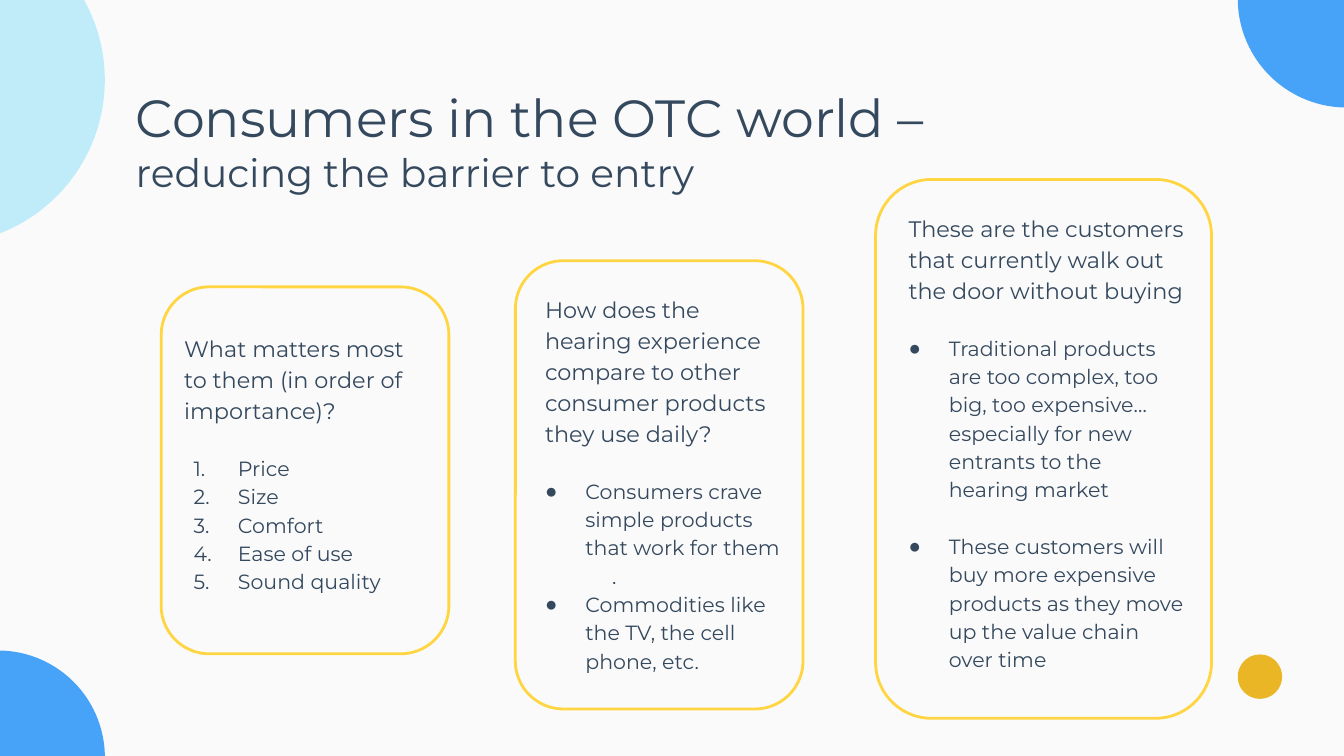
from lxml.etree import SubElement
from pptx import Presentation
from pptx.dml.color import RGBColor
from pptx.enum.shapes import MSO_SHAPE
from pptx.enum.text import MSO_ANCHOR, MSO_AUTO_SIZE, PP_ALIGN
from pptx.oxml.ns import qn
from pptx.util import Inches, Pt

COLUMNS = 100  # the grid has square cells, 100 across the slide
INK, YELLOW, BLUE, SKY, GOLD, PAPER = (
    "35495E", "FFD542", "47A3F7", "4CD2F8", "EAB625", "FAFAFA")
BLANK_LINE = 15.2

# Paragraph looks: (left margin, first-line indent) in cells, bullet elements
LOOKS = {
    "plain": (0, 0, [("buNone", {})]),
    "number": (4, -3.3, [("buFont", {"typeface": "Montserrat"}),
                         ("buAutoNum", {"type": "arabicPeriod"})]),
    "dot": (3, -3, [("buChar", {"char": "●"})]),
    "inset": (5, 0, [("buNone", {})]),
}

# Each card: outline box, text box, question, answers (look, gap before, words)
CARDS = [
    ((12, 21.35, 21.4, 27.3), (12.7, 23.65, 20.3, 21.5),
     "What matters most to them (in order of importance)?",
     [("number", BLANK_LINE, "Price"), ("number", 0, "Size"),
      ("number", 0, "Comfort"), ("number", 0, "Ease of use"),
      ("number", 0, "Sound quality")]),
    ((38.35, 19.4, 21.4, 33.35), (39.55, 20.75, 20.3, 30.4),
     "How does the hearing experience compare to other consumer products "
     "they use daily?",
     [("dot", BLANK_LINE, "Consumers crave simple products that work for them"),
      ("inset", 0, "."),
      ("dot", 0, "Commodities like the TV, the cell phone, etc.")]),
    ((65.15, 13.35, 25, 40.1), (66.6, 14.7, 22.7, 40.8),
     "These are the customers that currently walk out the door without buying",
     [("dot", BLANK_LINE, "Traditional products are too complex, too big, too "
       "expensive… especially for new entrants to the hearing market"),
      ("dot", BLANK_LINE, "These customers will buy more expensive products as "
       "they move up the value chain over time")]),
]


def color(hex_value):
    return RGBColor.from_string(hex_value)


def apply(target, values):
    for name, value in values.items():
        setattr(target, name, value)


class SlideBuilder:
    font = {"name": "Montserrat", "bold": False}

    def __init__(self, deck, layout_index):
        self.cell = deck.slide_width / COLUMNS
        self.slide = deck.slides.add_slide(deck.slide_layouts[layout_index])
        self.slide.background.fill.solid()
        self.slide.background.fill.fore_color.rgb = color(PAPER)

    def box(self, cells):
        return [round(n * self.cell) for n in cells]

    def shape(self, preset, cells, fill=None, line=None, alpha=None, adjust=()):
        shape = self.slide.shapes.add_shape(preset, *self.box(cells))
        shape.shadow.inherit = False
        for index, value in enumerate(adjust):
            shape.adjustments[index] = value
        if fill:
            shape.fill.solid()
            shape.fill.fore_color.rgb = color(fill)
        else:
            shape.fill.background()
        if line:
            shape.line.color.rgb = color(line)
            shape.line.width = Pt(1.5)
        else:
            shape.line.fill.background()
        if alpha:
            tint = shape.fill._xPr.find(".//" + qn("a:srgbClr"))
            SubElement(tint, qn("a:alpha"), val=str(alpha * 1000))

    def quarter(self, center, radius, start, end):
        """A quarter disc; angles in degrees, clockwise from the right."""
        x, y = center
        self.shape(MSO_SHAPE.PIE, (x - radius, y - radius, 2 * radius, 2 * radius),
                   fill=BLUE, adjust=(start * 0.6, end * 0.6))

    def text(self, placeholder, cells, paragraphs, spacing):
        """Fill a placeholder with (words, size, look, gap before) paragraphs."""
        apply(placeholder, dict(zip(("left", "top", "width", "height"),
                                    self.box(cells))))
        frame = placeholder.text_frame
        inset = Inches(0.1)
        apply(frame, {"word_wrap": True, "auto_size": MSO_AUTO_SIZE.NONE,
                      "vertical_anchor": MSO_ANCHOR.TOP,
                      "margin_left": inset, "margin_right": inset,
                      "margin_top": inset, "margin_bottom": inset})
        for index, (words, size, look, gap) in enumerate(paragraphs):
            paragraph = frame.add_paragraph() if index else frame.paragraphs[0]
            self.bullet(paragraph, *LOOKS[look])
            apply(paragraph, {"alignment": PP_ALIGN.LEFT, "line_spacing": spacing,
                              "space_before": Pt(gap), "space_after": Pt(0)})
            run = paragraph.add_run()
            run.text = words
            apply(run.font, {**self.font, "size": Pt(size)})
            run.font.color.rgb = color(INK)

    def bullet(self, paragraph, margin, indent, marks):
        properties = paragraph._p.get_or_add_pPr()
        properties.set("marL", str(round(margin * self.cell)))
        properties.set("indent", str(round(indent * self.cell)))
        SubElement(SubElement(properties, qn("a:buClr")), qn("a:srgbClr"), val=INK)
        for tag, attributes in marks:
            SubElement(properties, qn("a:" + tag), **attributes)


def main():
    deck = Presentation()
    deck.slide_width = Inches(10)
    deck.slide_height = deck.slide_width * 9 // 16
    builder = SlideBuilder(deck, 4)  # title with four bodies
    title, *bodies = builder.slide.placeholders

    # Corner decoration
    builder.shape(MSO_SHAPE.OVAL, (-16.7, -6.3, 24.5, 24.5), fill=SKY, alpha=33)
    builder.shape(MSO_SHAPE.OVAL, (92.1, 48.7, 3.3, 3.3), fill=GOLD)
    builder.quarter((-0.15, 56.35), 7.95, 270, 0)
    builder.quarter((100.2, -0.1), 8.1, 90, 180)

    # Title
    builder.text(title, (9.1, 5.35, 81.1, 18.7),
                 [("Consumers in the OTC world –", 28, "plain", 0),
                  ("reducing the barrier to entry", 21, "plain", 0)], 1)

    # Cards
    for body, (outline, area, question, answers) in zip(bodies, CARDS):
        builder.shape(MSO_SHAPE.ROUNDED_RECTANGLE, outline, line=YELLOW,
                      adjust=(0.167,))
        builder.text(body, area, [(question, 12, "plain", 0)] + [
            (words, 11, look, gap) for look, gap, words in answers], 1.15)

    # Unused body
    for spare in bodies[len(CARDS):]:
        spare.element.getparent().remove(spare.element)

    deck.save("out.pptx")


if __name__ == "__main__":
    main()
